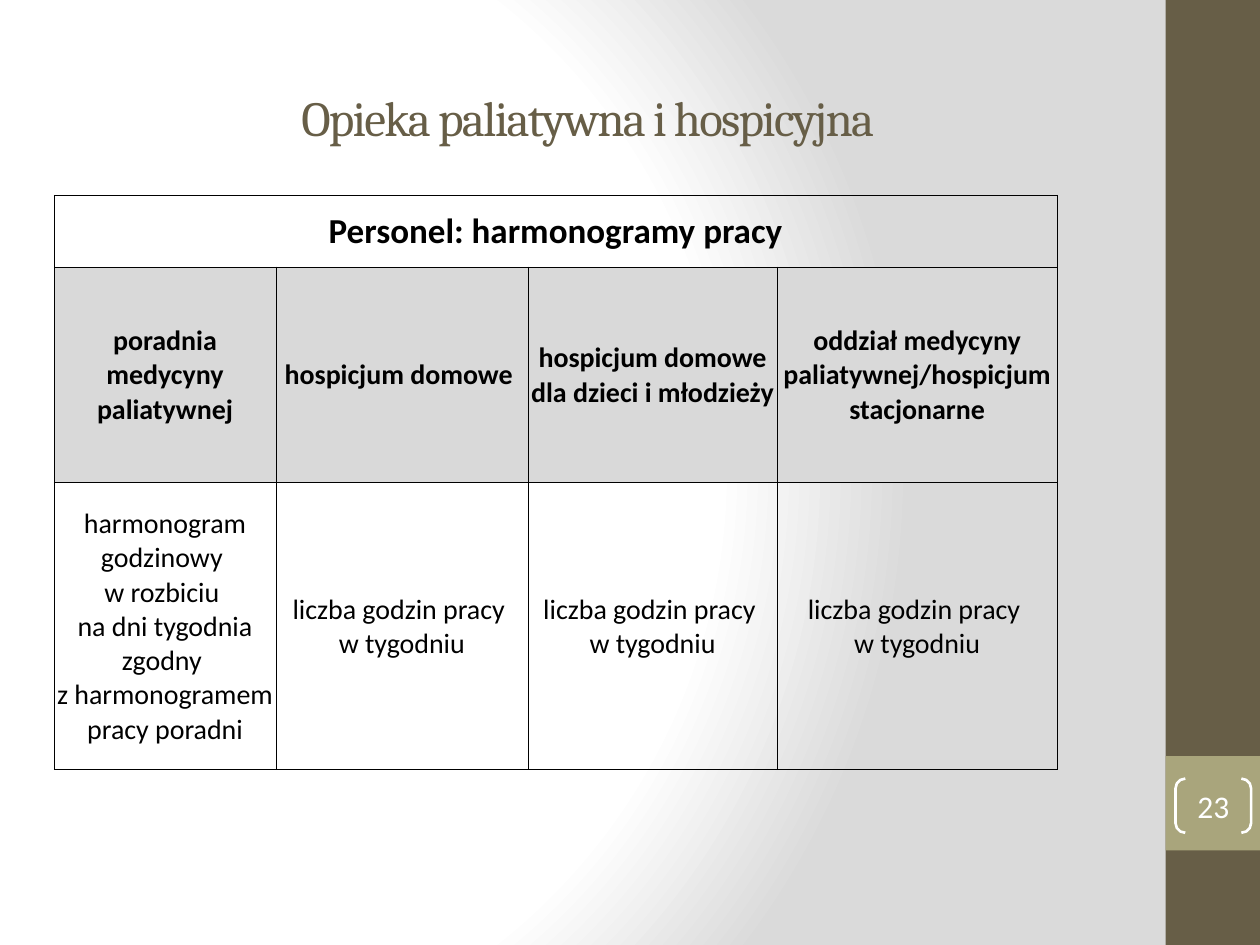
from copy import deepcopy
from dataclasses import dataclass
from typing import Optional

from pptx import Presentation
from pptx.dml.color import RGBColor
from pptx.enum.shapes import MSO_SHAPE
from pptx.enum.text import MSO_ANCHOR, PP_ALIGN
from pptx.oxml import parse_xml
from pptx.oxml.ns import nsdecls, qn
from pptx.util import Inches, Pt

COLOURS = {
    "white": "FFFFFF",
    "edge": "DADADA",
    "brown": "675E47",
    "olive": "A9A57C",
    "header": "D9D9D9",
    "black": "000000",
}


@dataclass(frozen=True)
class Area:
    left: float
    top: float
    width: float
    height: float

    def lengths(self) -> list:
        return [Inches(n) for n in (self.left, self.top, self.width, self.height)]


@dataclass(frozen=True)
class TextStyle:
    size: float
    colour: str = "black"
    face: str = "Calibri"
    bold: bool = False
    spacing: int = 0


@dataclass(frozen=True)
class TableRow:
    height: float
    texts: tuple[str, ...]
    style: TextStyle
    fill: Optional[str] = None


TITLE_STYLE = TextStyle(28, "brown", "Cambria", spacing=-100)
NUMBER_STYLE = TextStyle(18, "white")
COLUMN_WIDTHS = (1.76, 2, 1.98, 2.22)
WEEKLY_HOURS = "liczba godzin pracy \vw tygodniu"
ROWS = (
    TableRow(0.57, ("Personel: harmonogramy pracy",), TextStyle(20, bold=True)),
    TableRow(
        1.71,
        (
            "poradnia medycyny paliatywnej",
            "hospicjum domowe ",
            "hospicjum domowe dla dzieci i młodzieży",
            "oddział medycyny paliatywnej/hospicjum stacjonarne",
        ),
        TextStyle(16, bold=True),
        "header",
    ),
    TableRow(
        2.28,
        (
            "harmonogram godzinowy \vw rozbiciu \vna dni tygodnia\n"
            "zgodny \vz harmonogramem pracy poradni",
            *[WEEKLY_HOURS] * 3,
        ),
        TextStyle(16),
    ),
)


def rgb(name: str) -> RGBColor:
    return RGBColor.from_string(COLOURS[name])


def set_attributes(target, values: dict) -> None:
    for name, value in values.items():
        setattr(target, name, value)


def write_text(frame, text: str, style: TextStyle) -> None:
    frame.text = text
    for para in frame.paragraphs:
        para.alignment = PP_ALIGN.CENTER
        for span in para.runs:
            set_attributes(
                span.font,
                {"name": style.face, "size": Pt(style.size), "bold": style.bold},
            )
            span.font.color.rgb = rgb(style.colour)
            if style.spacing:
                span.font._element.set("spc", str(style.spacing))
        for line_break in para._p.findall(qn("a:br")):
            line_break.insert(0, deepcopy(para.runs[0].font._element))


def paint_background(page) -> None:
    page.background.fill.solid()
    properties = page._element.find(".//" + qn("p:bgPr"))
    stops = "".join(
        f'<a:gs pos="{position * 1000}"><a:srgbClr val="{COLOURS[name]}"/></a:gs>'
        for position, name in ((0, "white"), (75, "white"), (100, "edge"))
    )
    gradient = parse_xml(
        f'<a:gradFill {nsdecls("a")} rotWithShape="1"><a:gsLst>{stops}</a:gsLst>'
        '<a:path path="circle"><a:fillToRect l="20000" t="50000" r="100000" b="50000"/>'
        "</a:path></a:gradFill>"
    )
    properties.replace(properties[0], gradient)


def add_block(page, area: Area, colour: str) -> None:
    block = page.shapes.add_shape(MSO_SHAPE.RECTANGLE, *area.lengths())
    block.shadow.inherit = False
    block.fill.solid()
    block.fill.fore_color.rgb = rgb(colour)
    block.line.fill.background()


def add_title(page, area: Area, text: str) -> None:
    box = page.shapes.add_textbox(*area.lengths())
    frame = box.text_frame
    set_attributes(frame, {"word_wrap": True, "vertical_anchor": MSO_ANCHOR.MIDDLE})
    write_text(frame, text, TITLE_STYLE)


def add_page_number(page, area: Area, text: str) -> None:
    bracket = page.shapes.add_shape(MSO_SHAPE.DOUBLE_BRACKET, *area.lengths())
    bracket.shadow.inherit = False
    bracket.adjustments[0] = 0.18
    bracket.fill.background()
    bracket.line.color.rgb = rgb("white")
    bracket.line.width = Pt(1.5)
    margins = dict.fromkeys(
        ("margin_left", "margin_top", "margin_right", "margin_bottom"), 0
    )
    set_attributes(
        bracket.text_frame, {**margins, "vertical_anchor": MSO_ANCHOR.MIDDLE}
    )
    write_text(bracket.text_frame, text, NUMBER_STYLE)


def add_borders(cell) -> None:
    properties = cell._tc.get_or_add_tcPr()
    for position, side in enumerate(("lnL", "lnR", "lnT", "lnB")):
        border = parse_xml(
            f'<a:{side} {nsdecls("a")} w="{Pt(0.5)}"><a:solidFill>'
            f'<a:srgbClr val="{COLOURS["black"]}"/></a:solidFill></a:{side}>'
        )
        properties.insert(position, border)


def format_cell(cell, fill: Optional[str]) -> None:
    set_attributes(
        cell,
        {
            "margin_left": Inches(0.01),
            "margin_top": Inches(0.01),
            "margin_right": Inches(0.01),
            "margin_bottom": 0,
            "vertical_anchor": MSO_ANCHOR.MIDDLE,
        },
    )
    if fill:
        cell.fill.solid()
        cell.fill.fore_color.rgb = rgb(fill)
    else:
        cell.fill.background()
    add_borders(cell)


def add_schedule(page, left: float, top: float) -> None:
    area = Area(left, top, sum(COLUMN_WIDTHS), sum(row.height for row in ROWS))
    holder = page.shapes.add_table(len(ROWS), len(COLUMN_WIDTHS), *area.lengths())
    table = holder.table
    set_attributes(table, {"first_row": False, "horz_banding": False})
    for column, width in zip(table.columns, COLUMN_WIDTHS):
        column.width = Inches(width)
    for index, row in enumerate(ROWS):
        table.rows[index].height = Inches(row.height)
        for cell in table.rows[index].cells:
            format_cell(cell, row.fill)
        for column, text in enumerate(row.texts):
            write_text(table.cell(index, column).text_frame, text, row.style)
    table.cell(0, 0).merge(table.cell(0, len(COLUMN_WIDTHS) - 1))


def main() -> None:
    deck = Presentation()
    set_attributes(deck, {"slide_width": Inches(10), "slide_height": Inches(7.5)})
    page = deck.slides.add_slide(deck.slide_layouts[6])
    paint_background(page)
    add_block(page, Area(9.25, 0, 0.75, 7.5), "brown")
    add_block(page, Area(9.25, 6, 0.75, 0.75), "olive")
    add_title(page, Area(0.5, 0.3, 8.33, 1.25), "Opieka paliatywna i hospicyjna")
    add_page_number(page, Area(9.33, 6.18, 0.6, 0.43), "23")
    add_schedule(page, 0.43, 1.55)
    deck.save("out.pptx")


if __name__ == "__main__":
    main()
